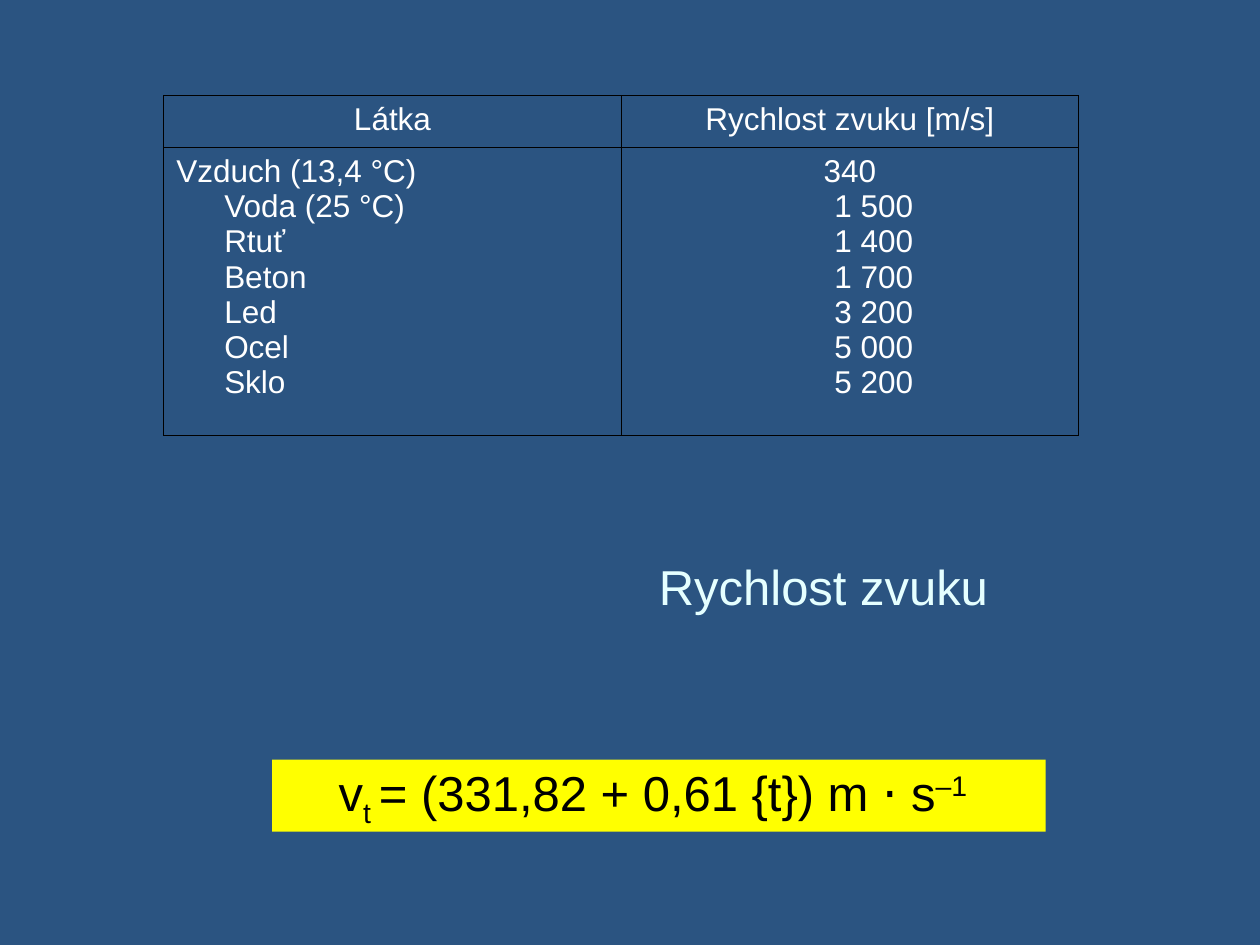
from lxml import etree
from pptx import Presentation
from pptx.dml.color import RGBColor
from pptx.enum.shapes import MSO_SHAPE
from pptx.enum.text import MSO_ANCHOR, MSO_AUTO_SIZE, PP_ALIGN
from pptx.oxml.ns import qn
from pptx.util import Inches, Pt

RECT = MSO_SHAPE.RECTANGLE
MIDDLE = MSO_ANCHOR.MIDDLE
GROW = MSO_AUTO_SIZE.SHAPE_TO_FIT_TEXT
LEFT, CENTER = PP_ALIGN.LEFT, PP_ALIGN.CENTER

BLUE = RGBColor(0x2B, 0x54, 0x81)
YELLOW = RGBColor(0xFF, 0xFF, 0x00)
PALE = RGBColor(0xE5, 0xFF, 0xFF)
WHITE = RGBColor(0xFF, 0xFF, 0xFF)
BLACK = RGBColor(0x00, 0x00, 0x00)


class Deck:
    face = "Arial"
    large, small = 28, 18
    hang = 0.38

    def __init__(self, slide):
        self.slide = slide
        fill = slide.background.fill
        fill.solid()
        fill.fore_color.rgb = BLUE

    def style(self, para, size, color, align=LEFT):
        para.alignment = align
        font = para.font
        font.name, font.size = self.face, Pt(size)
        font.color.rgb = color

    def indent(self, para, left, first=0.0):
        props = para._p.get_or_add_pPr()
        props.set("marL", str(Inches(left)))
        props.set("indent", str(Inches(first)))

    def title(self, text, box):
        frame = self.slide.shapes.add_textbox(*map(Inches, box)).text_frame
        frame.word_wrap = True
        frame.vertical_anchor = MIDDLE
        para = frame.paragraphs[0]
        para.text = text
        self.style(para, self.large, PALE, CENTER)

    def formula(self, parts, box):
        shape = self.slide.shapes.add_shape(RECT, *map(Inches, box))
        shape.shadow.inherit = False
        shape.fill.solid()
        shape.fill.fore_color.rgb = YELLOW
        shape.line.fill.background()
        frame = shape.text_frame
        frame.vertical_anchor = MIDDLE
        frame.auto_size = GROW
        para = frame.paragraphs[0]
        self.indent(para, 0.43)
        for text, shift in parts:
            run = para.add_run()
            run.text = text
            if shift:
                run._r.get_or_add_rPr().set("baseline", str(shift * 1000))
        self.style(para, self.large, BLACK)

    def border(self, cell):
        props = cell._tc.get_or_add_tcPr()
        for side in ("lnL", "lnR", "lnT", "lnB"):
            line = etree.SubElement(props, qn("a:" + side), w=str(Pt(0.75)))
            fill = etree.SubElement(line, qn("a:solidFill"))
            etree.SubElement(fill, qn("a:srgbClr"), val=str(BLACK))

    def table(self, rows, aligns, heights, box):
        frame = self.slide.shapes.add_table(
            len(rows), len(rows[0]), *map(Inches, box))
        table = frame.table
        table.first_row = table.horz_banding = False
        for row, height in zip(table.rows, heights):
            row.height = Inches(height)
        for r, texts in enumerate(rows):
            for c, text in enumerate(texts):
                cell = table.cell(r, c)
                self.border(cell)
                cell.fill.background()
                para = cell.text_frame.paragraphs[0]
                para.text = text
                self.indent(para, self.hang, -self.hang)
                self.style(para, self.small, WHITE, aligns[r][c])


def main():
    prs = Presentation()
    prs.slide_width, prs.slide_height = Inches(10), Inches(7.5)
    deck = Deck(prs.slides.add_slide(prs.slide_layouts[6]))

    # Formula for the speed in air
    deck.formula([("v", 0), ("t ", -25),
                  ("= (331,82 + 0,61 {t}) m ⋅ s", 0), ("–1", 30)],
                 (2.16, 6.03, 6.14, 0.57))

    # Title
    deck.title("Rychlost zvuku", (3.82, 4.14, 5.43, 1.02))

    # Speeds by substance, one line each within a cell
    speeds = [("Vzduch (13,4 °C)", "340"), ("Voda (25 °C)", "1 500"),
              ("Rtuť", "1 400"), ("Beton", "1 700"), ("Led", "3 200"),
              ("Ocel", "5 000"), ("Sklo", "5 200")]
    deck.table([("Látka", "Rychlost zvuku [m/s]"),
                ["\v".join(column) for column in zip(*speeds)]],
               [(CENTER, CENTER), (LEFT, CENTER)],
               (0.41, 2.29), (1.3, 0.76, 7.26, 2.7))

    prs.save("out.pptx")


if __name__ == "__main__":
    main()
